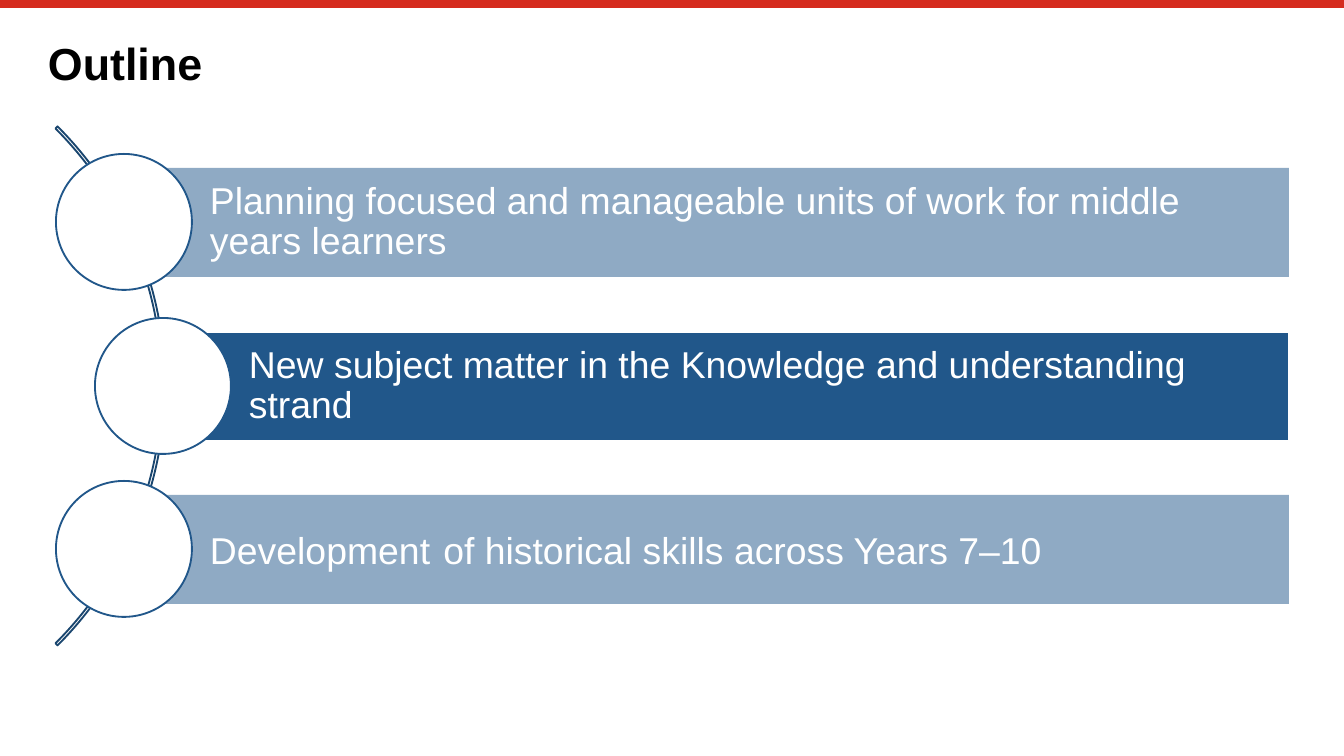
from dataclasses import dataclass

import pptx
import pptx.dml.color
import pptx.enum.shapes
import pptx.enum.text
import pptx.oxml
import pptx.oxml.ns
import pptx.util

SCALE = 914400 / 134.4  # EMU per px
COLORS = {"red": "D52B1E", "navy": "1A466F", "blue": "21578A",
          "white": "FFFFFF", "black": "000000"}
FONT = "Arial"
RIGHT = 1289
BAR_H = 109
CIRCLE = 136
SHAPE = pptx.enum.shapes.MSO_SHAPE
ANCHOR = pptx.enum.text.MSO_ANCHOR
ALIGN = pptx.enum.text.PP_ALIGN


@dataclass
class Topic:
    x: int  # centre of the circle, and left edge of the bar
    y: int  # centre of both
    runs: list[tuple[str, int]]
    current: bool = False


TOPICS = [
    Topic(124, 222, [("Planning focused and manageable units of work "
                      "for middle years learners", 20)]),
    Topic(163, 386, [("New subject matter in the Knowledge and "
                      "understanding strand", 20)], current=True),
    Topic(124, 549, [("Development", 20), (" ", 25),
                     ("of historical skills across Years 7–10", 20)]),
]


def px(n: int) -> pptx.util.Emu:
    return pptx.util.Emu(round(n * SCALE))


def rgb(name: str) -> pptx.dml.color.RGBColor:
    return pptx.dml.color.RGBColor.from_string(COLORS[name])


def add_shape(s, kind, x: int, y: int, w: int, h: int,
              fill: str | None, line: str | None):
    sp = s.shapes.add_shape(kind, px(x), px(y), px(w), px(h))
    sp.shadow.inherit = False
    if fill:
        sp.fill.solid()
        sp.fill.fore_color.rgb = rgb(fill)
    else:
        sp.fill.background()
    if line:
        sp.line.color.rgb = rgb(line)
        sp.line.width = pptx.util.Pt(1)
    else:
        sp.line.fill.background()
    return sp


def set_alpha(sp, percent: int) -> None:
    color = sp._element.spPr.find(".//" + pptx.oxml.ns.qn("a:srgbClr"))
    color.append(pptx.oxml.parse_xml(
        f'<a:alpha {pptx.oxml.ns.nsdecls("a")} val="{percent * 1000}"/>'))


def write(tf, runs: list[tuple[str, int]], color: str, bold: bool,
          insets: tuple[int, int, int, int]) -> None:
    tf.word_wrap = True
    tf.auto_size = pptx.enum.text.MSO_AUTO_SIZE.NONE
    tf.vertical_anchor = ANCHOR.MIDDLE
    (tf.margin_left, tf.margin_top,
     tf.margin_right, tf.margin_bottom) = map(px, insets)
    p = tf.paragraphs[0]
    p.alignment = ALIGN.LEFT
    p.line_spacing = 0.9
    for text, size in runs:
        r = p.add_run()
        r.text = text
        r.font.name = FONT
        r.font.size = pptx.util.Pt(size)
        r.font.bold = bold
        r.font.color.rgb = rgb(color)


def add_topic(s, topic: Topic) -> None:
    bar = add_shape(s, SHAPE.RECTANGLE, topic.x, topic.y - BAR_H // 2,
                    RIGHT - topic.x, BAR_H, "blue",
                    "white" if topic.current else None)
    if not topic.current:
        set_alpha(bar, 50)
    write(bar.text_frame, topic.runs, "white", False, (86, 8, 8, 8))
    add_shape(s, SHAPE.OVAL, topic.x - CIRCLE // 2, topic.y - CIRCLE // 2,
              CIRCLE, CIRCLE, "white", "blue")


def main() -> None:
    prs = pptx.Presentation()
    prs.slide_width, prs.slide_height = px(1344), px(756)
    s = prs.slides.add_slide(prs.slide_layouts[5])

    # Red rule along the top edge
    rule = s.shapes.add_connector(pptx.enum.shapes.MSO_CONNECTOR.STRAIGHT,
                                  px(0), px(4), px(1344), px(4))
    rule.line.color.rgb = rgb("red")
    rule.line.width = pptx.util.Pt(4.2)
    rule._element.spPr.append(pptx.oxml.parse_xml(
        f'<a:effectLst {pptx.oxml.ns.nsdecls("a")}/>'))

    # Title
    title = s.shapes.title
    title.left, title.top, title.width, title.height = map(
        px, (48, 40, 1249, 52))
    write(title.text_frame, [("Outline", 24)], "black", True, (0, 0, 0, 0))

    # Thin arc behind the circles
    arc = add_shape(s, SHAPE.BLOCK_ARC, -569, 19, 734, 734, None, "navy")
    for i, value in enumerate((189, 27, 0.004)):  # 315° to 45°, thickness
        arc.adjustments[i] = value

    # Topics
    for topic in TOPICS:
        add_topic(s, topic)

    prs.save("out.pptx")


if __name__ == "__main__":
    main()
